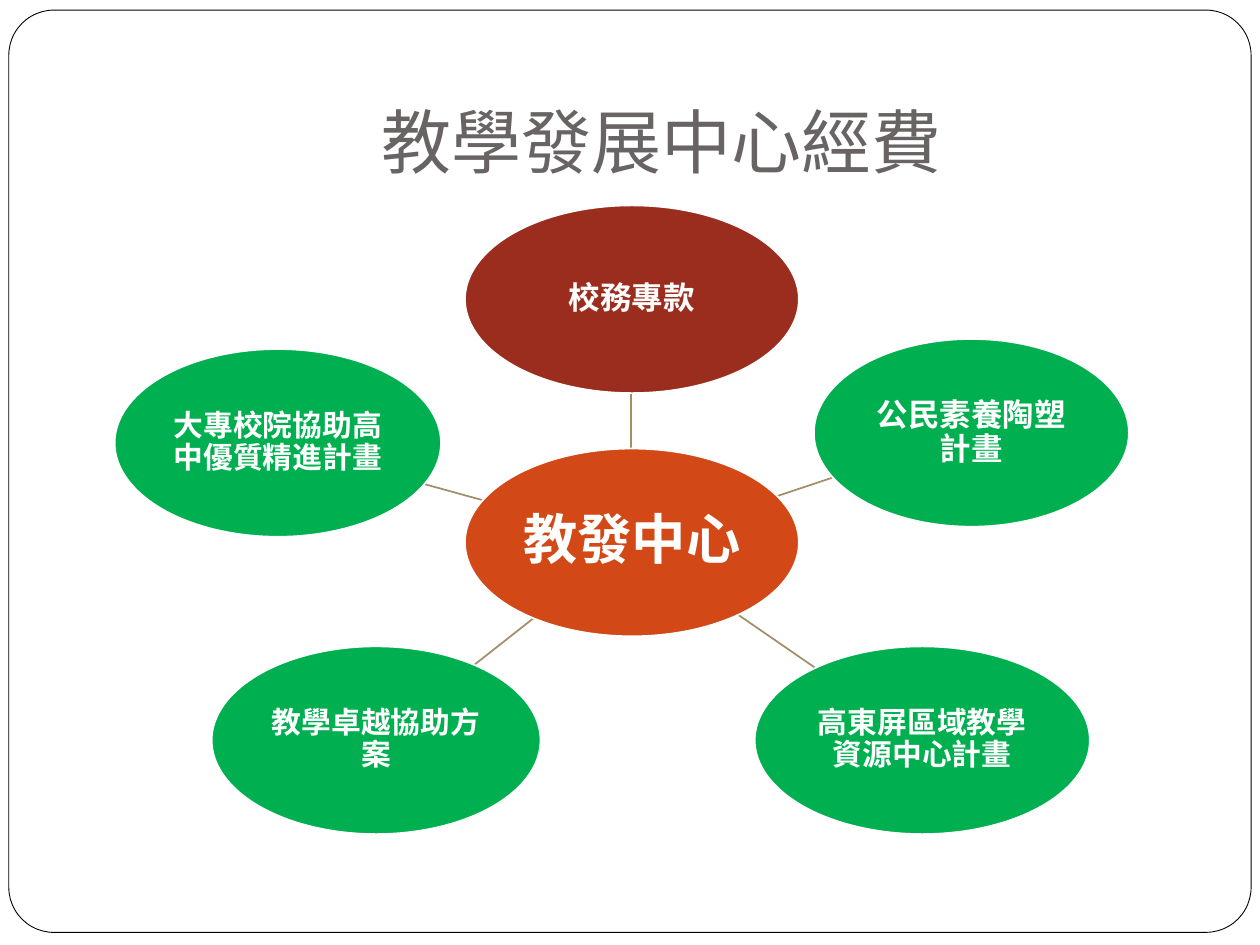
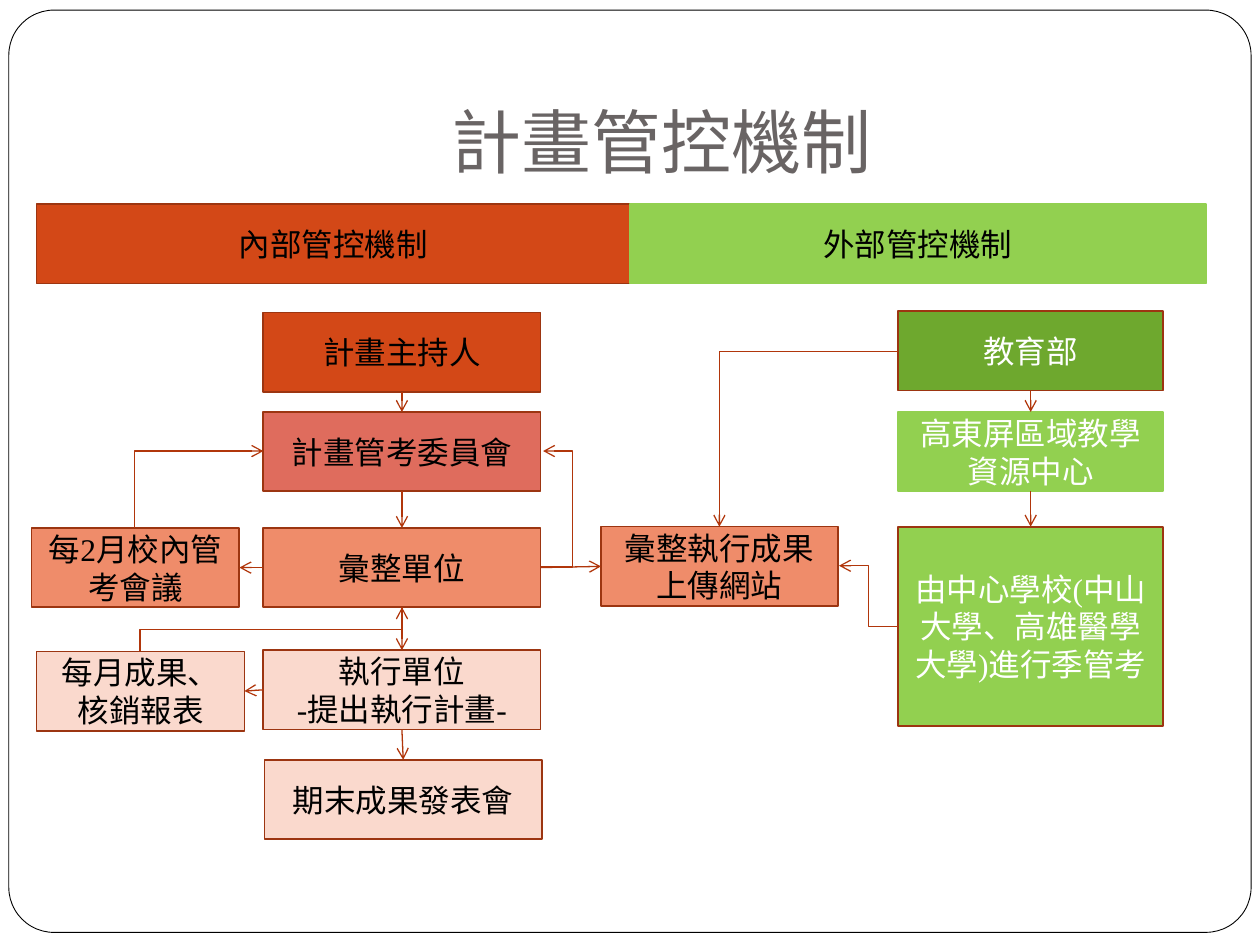
from lxml import etree
from pptx import Presentation
from pptx.dml.color import RGBColor
from pptx.enum.shapes import MSO_CONNECTOR, MSO_SHAPE
from pptx.enum.text import MSO_ANCHOR, PP_ALIGN
from pptx.oxml.ns import qn
from pptx.util import Pt

PX = 9144  # 100 px to the inch
RECT, OVAL = MSO_SHAPE.RECTANGLE, MSO_SHAPE.OVAL
ROUND, FLOW = MSO_SHAPE.ROUNDED_RECTANGLE, MSO_SHAPE.FLOWCHART_PROCESS
LINE, ELBOW = MSO_CONNECTOR.STRAIGHT, MSO_CONNECTOR.ELBOW
MIDDLE, BOTTOM, CENTER = MSO_ANCHOR.MIDDLE, MSO_ANCHOR.BOTTOM, PP_ALIGN.CENTER
TOP, LEFT, BASE, RIGHT = range(4)

WHITE, BLACK, GRAY = "FFFFFF", "000000", "696464"
ORANGE, BROWN, RUST, TAN = "D34817", "9C3511", "B1360B", "A28E6A"
MAROON, ROSE, SALMON, PALE = "9B2D1F", "DF6C5D", "EF8C6A", "FAD9CD"
GREEN, LIME, OLIVE = "00B050", "92D050", "6EA82E"
SERIF, SANS = "Times New Roman", "Roboto"
rgb = RGBColor.from_string


def put(slide, text, at, kind=RECT, fill=None, edge=None, width=1, size=18,
        color=BLACK, font=SERIF, bold=False, anchor=MIDDLE,
        inset=(10, 5, 10, 5), space=None):
    """Add a shape with centred text; at and inset are in px."""
    shape = slide.shapes.add_shape(kind, *(n * PX for n in at))
    shape.shadow.inherit = False
    for part, tint in ((shape.fill, fill), (shape.line.fill, edge)):
        if tint:
            part.solid()
            part.fore_color.rgb = rgb(tint)
        else:
            part.background()
    if edge:
        shape.line.width = Pt(width)
    frame = shape.text_frame
    frame.word_wrap = True
    frame.vertical_anchor = anchor
    (frame.margin_left, frame.margin_top,
     frame.margin_right, frame.margin_bottom) = (n * PX for n in inset)
    frame.text = text
    for para in frame.paragraphs:
        para.alignment = CENTER
        para.line_spacing = space
        for run in para.runs:
            run.font.size, run.font.name, run.font.bold = Pt(size), font, bold
            run.font.color.rgb = rgb(color)
    return shape


def link(slide, start, end, kind=LINE, color=RUST, width=0.75,
         arrow="tailEnd", upright=False, preset=None, bend=None):
    """Join two px points; upright makes an elbow leave vertically."""
    (x1, y1), (x2, y2) = start, end
    if upright:
        mid_x, mid_y = (x1 + x2) / 2, (y1 + y2) / 2
        dx, dy = x1 - mid_x, y1 - mid_y
        x1, y1, x2, y2 = mid_x + dy, mid_y - dx, mid_x - dy, mid_y + dx
    wire = slide.shapes.add_connector(
        kind, *(round(n * PX) for n in (x1, y1, x2, y2)))
    wire.line.color.rgb = rgb(color)
    wire.line.width = Pt(width)
    props = wire._element.spPr
    geom = props.find(qn("a:prstGeom"))
    if upright:
        props.find(qn("a:xfrm")).set("rot", "5400000")
    if preset:
        geom.set("prst", preset)
    if bend:
        etree.SubElement(geom.find(qn("a:avLst")), qn("a:gd"),
                         name="adj1", fmla=f"val {bend}")
    if arrow:
        etree.SubElement(props.find(qn("a:ln")), qn("a:" + arrow), type="arrow")
    etree.SubElement(props, qn("a:effectLst"))
    return wire


deck = Presentation()
deck.slide_width, deck.slide_height = 1000 * PX, 750 * PX
pages = []
for title in ("教學發展中心經費", "計畫管控機制"):
    page = deck.slides.add_slide(deck.slide_layouts[6])
    border = put(page, "", (7, 8, 986, 732), ROUND, WHITE, BLACK, 0.5)
    border.adjustments[0] = 0.049
    put(page, title, (100, 30, 850, 125), size=40, color=GRAY, font=SANS,
        anchor=BOTTOM, inset=(10, 5, 10, 10))
    pages.append(page)
funds, control = pages

# Funding sources around the centre
spokes = [
    ((501, 356), (501, 312)), ((616, 394), (661, 379)),
    ((586, 488), (647, 530)), ((423, 491), (376, 528)),
    ((383, 397), (336, 384)),
]
for start, end in spokes:
    link(funds, start, end, color=TAN, width=1, arrow=None)

ovals = [
    ("教發中心", 369, 356, 265, ORANGE, 31),
    ("校務專款", 369, 163, 265, MAROON, 18),
    ("公民素養陶塑計畫", 646, 269, 250, GREEN, 18),
    ("高東屏區域教學資源中心計畫", 599, 513, 266, GREEN, 17),
    ("教學卓越協助方案", 168, 513, 261, GREEN, 17),
    ("大專校院協助高中優質精進計畫", 91, 277, 259, GREEN, 17),
]
for text, x, y, wide, fill, size in ovals:
    put(funds, text, (x, y, wide, 149), OVAL, fill, WHITE, size=size,
        color=WHITE, bold=True, inset=(1, 1, 1, 1), space=0.9)

# Internal and external control
cells = [
    ("inside", "內部管控機制", 29, 162, 471, ORANGE, BROWN, BLACK),
    ("outside", "外部管控機制", 500, 162, 457, LIME, LIME, BLACK),
    ("host", "計畫主持人", 209, 248, 220, ORANGE, BROWN, BLACK),
    ("board", "計畫管考委員會", 209, 327, 220, ROSE, BROWN, BLACK),
    ("hub", "彙整單位", 209, 419, 220, SALMON, BROWN, BLACK),
    ("report", "每月成果、核銷報表", 29, 517, 165, PALE, BROWN, BLACK),
    ("meeting", "每2月校內管考會議", 25, 419, 165, SALMON, BROWN, BLACK),
    ("ministry", "教育部", 713, 247, 210, OLIVE, BROWN, WHITE),
    ("region", "高東屏區域教學資源中心", 713, 327, 210, LIME, LIME, WHITE),
    ("unit", "執行單位\n-提出執行計畫-", 209, 516, 220, PALE, BROWN, BLACK),
    ("final", "期末成果發表會", 210, 603, 220, PALE, BROWN, BLACK),
    ("upload", "彙整執行成果上傳網站", 477, 418, 188, SALMON, BROWN, BLACK),
]
boxes = {}
for name, text, x, y, wide, fill, edge, color in cells:
    boxes[name] = put(control, text, (x, y, wide, 63), fill=fill, edge=edge,
                      color=color)
boxes["review"] = put(
    control, "由中心學校(中山大學、高雄醫學大學)進行季管考",
    (713, 418, 210, 158), FLOW, LIME, BROWN, color=WHITE)

joins = [
    ("host", BASE, "board", TOP), ("board", BASE, "hub", TOP),
    ("hub", BASE, "unit", TOP), ("unit", BASE, "final", TOP),
    ("hub", LEFT, "meeting", RIGHT), ("unit", LEFT, "report", RIGHT),
    ("hub", RIGHT, "upload", LEFT), ("ministry", BASE, "region", TOP),
    ("region", BASE, "review", TOP),
]
for source, leave, target, enter in joins:
    wire = link(control, (0, 0), (1, 1))
    wire.begin_connect(boxes[source], leave)
    wire.end_connect(boxes[target], enter)

link(control, (111, 517), (319, 482), ELBOW, upright=True)
link(control, (209, 358), (107, 419), ELBOW, preset="bentConnector2",
     arrow="headEnd")
link(control, (713, 279), (571, 418), ELBOW, preset="bentConnector2")
link(control, (429, 450), (431, 358), ELBOW, bend=1250000)
link(control, (713, 497), (666, 449), ELBOW)

deck.save("out.pptx")
